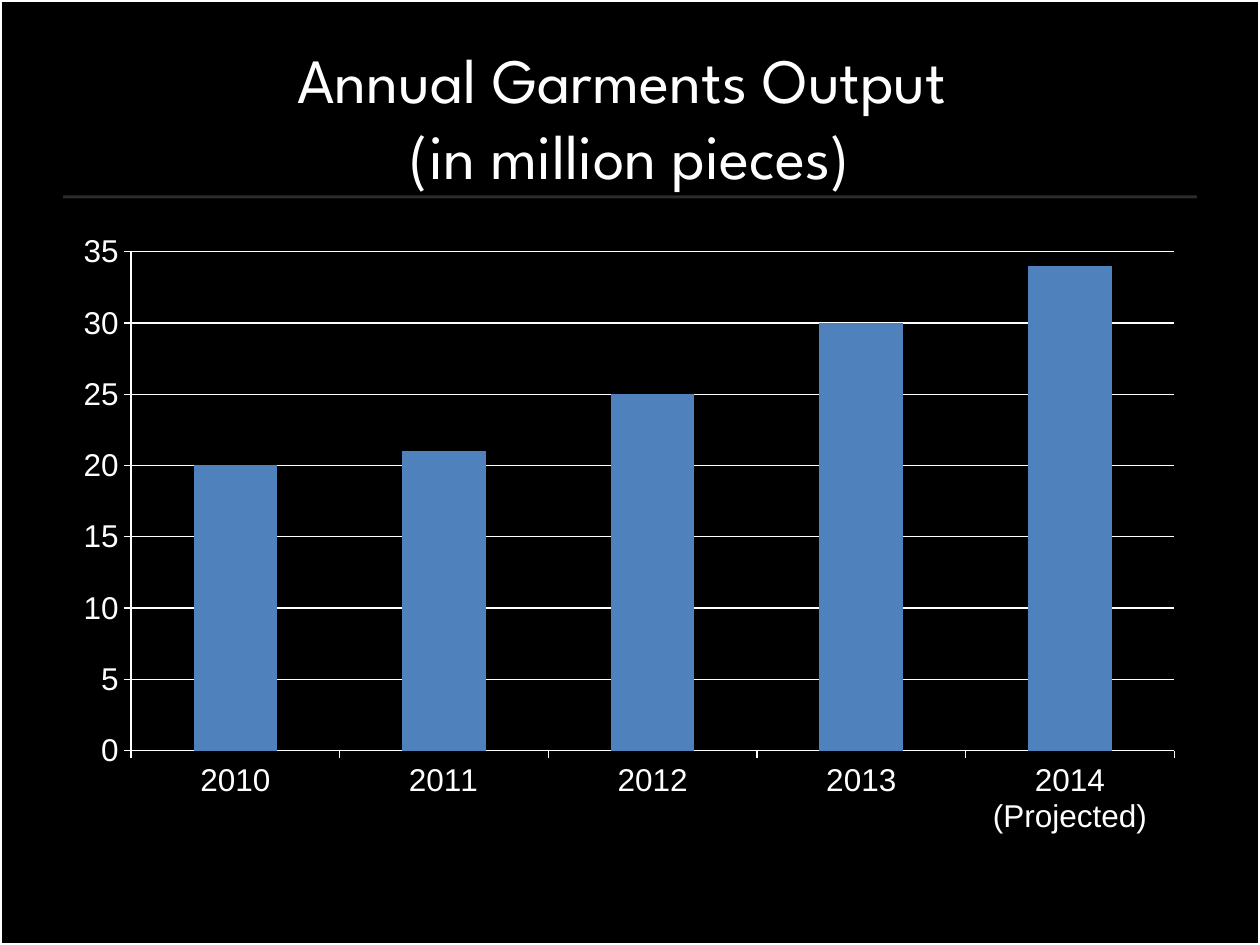
import pptx
import pptx.chart.data
import pptx.dml.color
import pptx.enum.chart
import pptx.enum.shapes
import pptx.enum.text
import pptx.oxml
import pptx.util
from pptx.util import Inches

WHITE = "FFFFFF"
BLACK = "000000"
BLUE = "4F81BD"
OUTPUT = {"2010": 20, "2011": 21, "2012": 25, "2013": 30, "2014 (Projected)": 34}
DRAWING_NS = "http://schemas.openxmlformats.org/drawingml/2006/main"
CHART_NS = "http://schemas.openxmlformats.org/drawingml/2006/chart"


def rgb(value):
    return pptx.dml.color.RGBColor.from_string(value)


def paint(fill, color):
    fill.solid()
    fill.fore_color.rgb = rgb(color)


def style_font(font, name, size, color):
    font.name = name
    font.size = pptx.util.Pt(size)
    font.color.rgb = rgb(color)


def style_line(line, color, width):
    line.color.rgb = rgb(color)
    line.width = pptx.util.Pt(width)


def add_border(slide, width, height):
    border = slide.shapes.add_shape(
        pptx.enum.shapes.MSO_SHAPE.RECTANGLE, 0, 0, width, height)
    border.shadow.inherit = False
    border.fill.background()
    style_line(border.line, WHITE, 2.25)


def add_drop_shadow(shape):
    shape._element.spPr.append(pptx.oxml.parse_xml(
        f'<a:effectLst xmlns:a="{DRAWING_NS}">'
        f'<a:outerShdw dist="{pptx.util.Pt(1.8)}" dir="5400000" rotWithShape="0">'
        '<a:srgbClr val="808080"><a:alpha val="35000"/></a:srgbClr>'
        '</a:outerShdw></a:effectLst>'))


def set_title(slide, text):
    title = slide.shapes.title
    title.left, title.top = Inches(0.5), Inches(0.3)
    title.width, title.height = Inches(9), Inches(1.25)
    paint(title.fill, BLACK)
    add_drop_shadow(title)
    frame = title.text_frame
    frame.text = text
    frame.word_wrap = True
    frame.auto_size = pptx.enum.text.MSO_AUTO_SIZE.NONE
    frame.vertical_anchor = pptx.enum.text.MSO_ANCHOR.MIDDLE
    frame.margin_left = frame.margin_right = Inches(0.04)
    frame.margin_top = frame.margin_bottom = Inches(0.04)
    heading = frame.paragraphs[0]
    heading.alignment = pptx.enum.text.PP_ALIGN.CENTER
    style_font(heading.font, "League Spartan", 36, WHITE)


def set_plot_layout(chart, **fractions):
    plot_area = chart._chartSpace.chart.plotArea
    for layout in plot_area.findall(f"{{{CHART_NS}}}layout"):
        plot_area.remove(layout)
    sizes = "".join(f'<c:{key} val="{value}"/>' for key, value in fractions.items())
    plot_area.insert(0, pptx.oxml.parse_xml(
        f'<c:layout xmlns:c="{CHART_NS}"><c:manualLayout>'
        '<c:layoutTarget val="inner"/><c:xMode val="edge"/><c:yMode val="edge"/>'
        f'{sizes}</c:manualLayout></c:layout>'))


def add_output_chart(slide):
    data = pptx.chart.data.CategoryChartData()
    data.categories = list(OUTPUT)
    data.add_series("Series 1", list(OUTPUT.values()))
    chart = slide.shapes.add_chart(
        pptx.enum.chart.XL_CHART_TYPE.COLUMN_STACKED,
        Inches(0.5), Inches(1.75), Inches(9), Inches(4.95), data).chart
    chart.has_title = False
    chart.has_legend = False
    style_font(chart.font, "Arial", 18, WHITE)
    set_plot_layout(chart, x=0.06, y=0.05, w=0.92, h=0.8)

    columns = chart.plots[0]
    columns.vary_by_categories = False
    columns.gap_width = 150
    columns.overlap = 100
    paint(columns.series[0].format.fill, BLUE)

    for axis in (chart.category_axis, chart.value_axis):
        axis.major_tick_mark = pptx.enum.chart.XL_TICK_MARK.OUTSIDE
        axis.minor_tick_mark = pptx.enum.chart.XL_TICK_MARK.NONE
        style_line(axis.format.line, WHITE, 0.75)
    values = chart.value_axis
    values.minimum_scale, values.maximum_scale, values.major_unit = 0, 35, 5
    values.has_major_gridlines = True
    style_line(values.major_gridlines.format.line, WHITE, 0.75)


def main():
    deck = pptx.Presentation()
    deck.slide_width, deck.slide_height = Inches(10), Inches(7.5)
    slide = deck.slides.add_slide(deck.slide_layouts[5])
    paint(slide.background.fill, BLACK)
    add_border(slide, deck.slide_width, deck.slide_height)
    set_title(slide, "Annual Garments Output \v(in million pieces)")
    add_output_chart(slide)
    deck.save("out.pptx")


if __name__ == "__main__":
    main()
